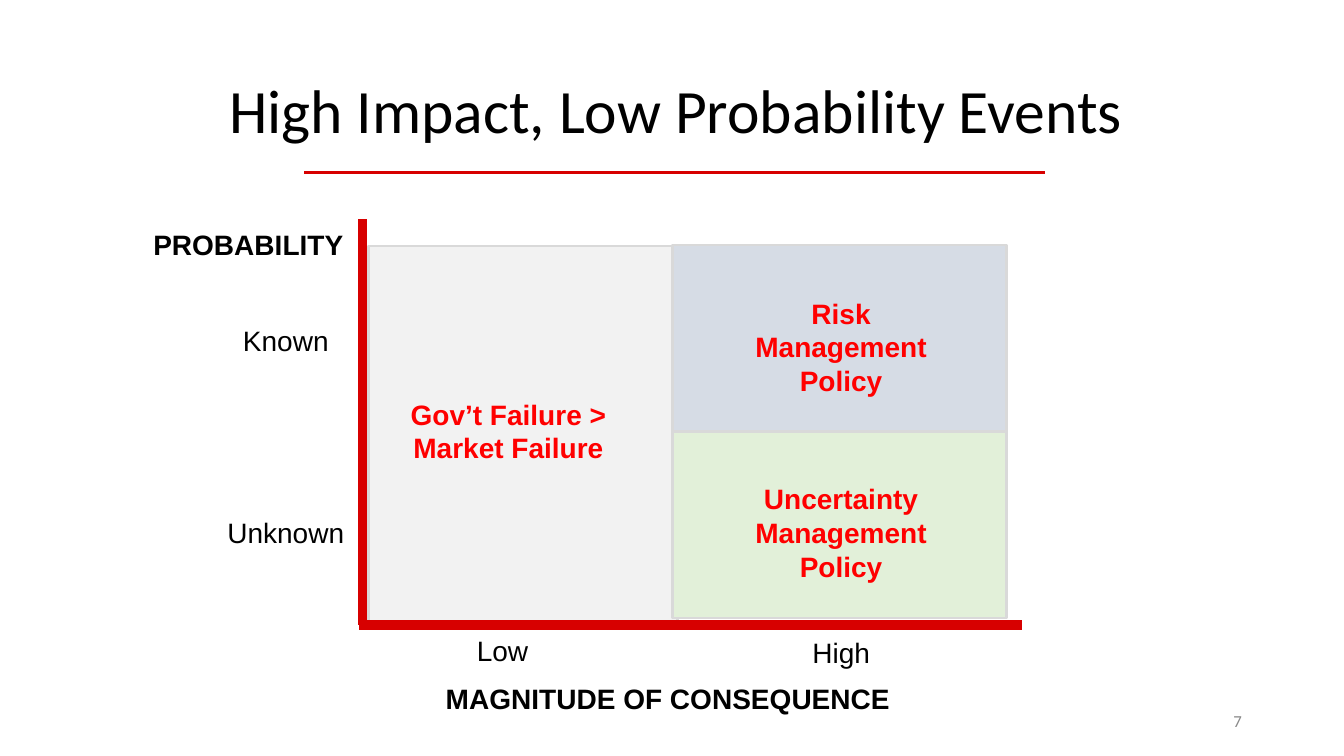
import pptx
import pptx.util
import pptx.dml.color
import pptx.enum.shapes
import pptx.enum.text
import pptx.oxml.ns
import lxml.etree

Pt = pptx.util.Pt
ALIGN = pptx.enum.text.PP_ALIGN
ANCHOR = pptx.enum.text.MSO_ANCHOR
COLORS = {"ink": "000000", "axis": "D70000", "policy": "FF0000", "edge": "D9D9D9",
          "low": "F2F2F2", "risk": "D6DCE5", "doubt": "E2F0D9", "page": "888888"}

LABEL = {"name": "Arial", "size": Pt(20), "bold": False}
STRONG = {**LABEL, "bold": True}
TITLE = {"name": "Calibri", "size": Pt(44), "bold": False}
PAGE = {"name": "Calibri", "size": Pt(12), "bold": False}


def color(key):
    return pptx.dml.color.RGBColor.from_string(COLORS[key])


def write(frame, text, form, ink="ink", align=ALIGN.CENTER, anchor=ANCHOR.TOP):
    frame.word_wrap = True
    frame.vertical_anchor = anchor
    para = frame.paragraphs[0]
    para.text = text
    para.alignment = align
    for name, value in form.items():
        setattr(para.font, name, value)
    para.font.color.rgb = color(ink)
    return para


def add_text(slide, box, text, form, **style):
    shape = slide.shapes.add_textbox(*map(Pt, box))
    write(shape.text_frame, text, form, **style)


def add_title(slide, box, text):
    title = slide.shapes.title
    title.left, title.top, title.width, title.height = map(Pt, box)
    para = write(title.text_frame, text, TITLE, anchor=ANCHOR.MIDDLE)
    para.line_spacing = 0.9


def add_cell(slide, box, fill):
    cell = slide.shapes.add_shape(pptx.enum.shapes.MSO_SHAPE.RECTANGLE, *map(Pt, box))
    cell.shadow.inherit = False
    cell.fill.solid()
    cell.fill.fore_color.rgb = color(fill)
    cell.line.color.rgb = color("edge")
    cell.line.width = Pt(2)


def add_line(slide, ends, width):
    line = slide.shapes.add_connector(
        pptx.enum.shapes.MSO_CONNECTOR.STRAIGHT, *map(Pt, ends))
    line.line.color.rgb = color("axis")
    line.line.width = Pt(width)
    props = line._element.spPr
    lxml.etree.SubElement(props, pptx.oxml.ns.qn("a:effectLst"))


def main():
    deck = pptx.Presentation()
    deck.slide_width, deck.slide_height = Pt(960), Pt(540)
    slide = deck.slides.add_slide(deck.slide_layouts[5])

    # Quadrants
    add_cell(slide, (263.5, 175.7, 220.3, 271.4), "low")
    right, top, wide, high = 480.2, 175, 239, 133.2
    for row, fill in enumerate(("risk", "doubt")):
        add_cell(slide, (right, top + row * high, wide, high), fill)

    # Title, its rule and the page number
    add_title(slide, (59, 28.8, 848, 104.4), "High Impact, Low Probability Events")
    add_line(slide, (217.4, 123.1, 746.6, 123.1), 2)
    add_text(slide, (678.2, 500.4, 216, 28.8), "7", PAGE, ink="page",
             align=ALIGN.RIGHT, anchor=ANCHOR.MIDDLE)

    # Axes
    add_line(slide, (256.3, 446.4, 730, 446.4), 6.5)
    add_line(slide, (259.2, 446.4, 259.2, 156.2), 6.5)

    # Axis names and levels
    for left, top, wide, text, form in (
            (96.5, 159.1, 167, "PROBABILITY ", STRONG),
            (311, 483.1, 337.7, "MAGNITUDE OF CONSEQUENCE ", STRONG),
            (315.4, 449.3, 87.1, "Low", LABEL),
            (557.3, 450.7, 87.1, "High", LABEL),
            (160.6, 227.5, 87.1, "Known", LABEL),
            (151.9, 364.3, 104.4, "Unknown", LABEL)):
        add_text(slide, (left, top, wide, 31.5), text, form)

    # Policies
    for left, top, high, text in (
            (514.8, 208.1, 80, "Risk Management Policy"),
            (514.8, 340.6, 80, "Uncertainty Management Policy"),
            (277.2, 280.1, 55.5, "Gov’t Failure > Market Failure")):
        add_text(slide, (left, top, 172, high), text, STRONG, ink="policy")

    deck.save("out.pptx")


if __name__ == "__main__":
    main()
